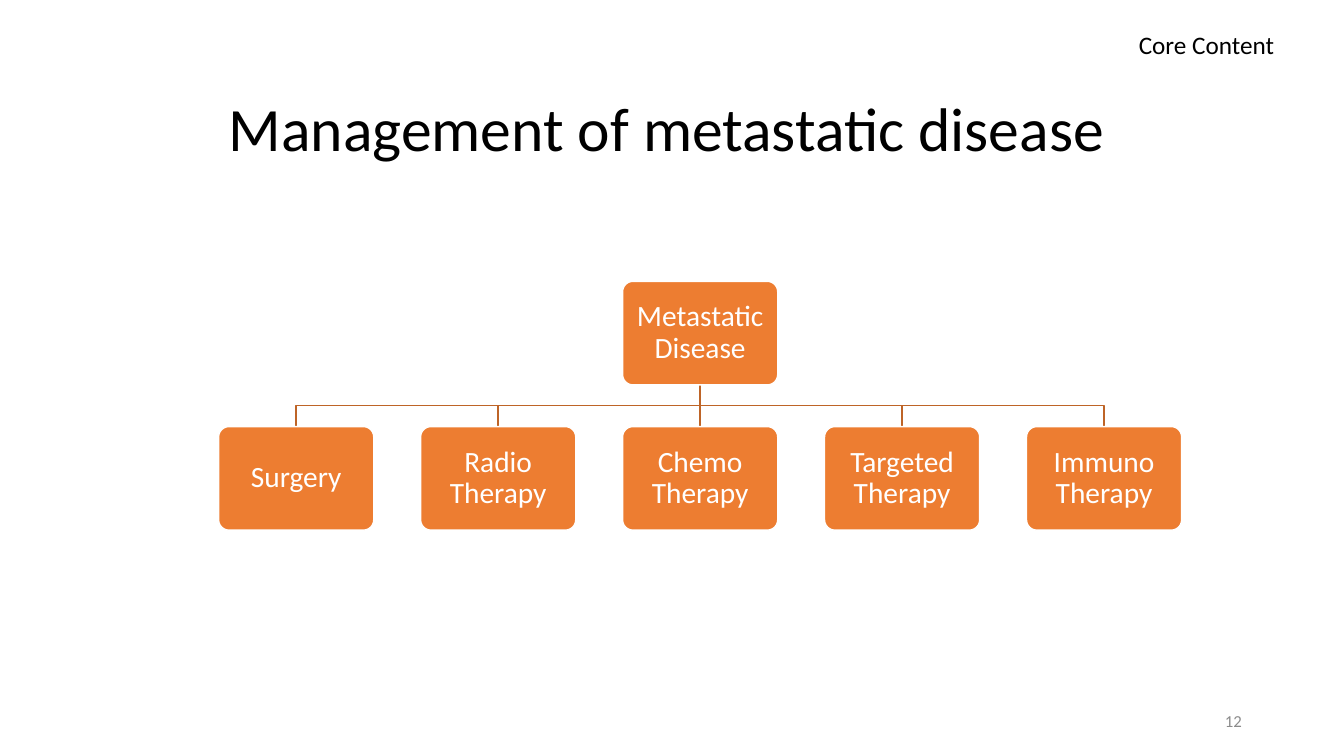
from pptx import Presentation
from pptx.dml.color import RGBColor
from pptx.enum.shapes import MSO_SHAPE as Shape
from pptx.enum.text import MSO_ANCHOR as Anchor, MSO_AUTO_SIZE as Fit, PP_ALIGN as Align
from pptx.util import Cm, Pt

# Content
TITLE = "Management of metastatic disease"
LABEL = "Core Content"
NUMBER = "12"
ROOT = "Metastatic Disease"
LEAVES = ["Surgery", "Radio Therapy", "Chemo Therapy", "Targeted Therapy", "Immuno Therapy"]

# Style and chart measures in cm
FONT = "Calibri"
COLORS = {"box": "ED7D31", "link": "BE6427", "white": "FFFFFF", "black": "000000", "grey": "8C8C8C"}
LEFT, STEP = 5.51, 5.09
WIDTH, HEIGHT = 3.91, 2.61
ROOT_TOP, LEAF_TOP = 7.09, 10.75


def color(name):
    return RGBColor.from_string(COLORS[name])


def write(shape, text, size, tint, align, anchor, space=None):
    frame = shape.text_frame
    frame.auto_size = Fit.NONE
    frame.word_wrap = True
    frame.vertical_anchor = anchor
    frame.text = text
    para = frame.paragraphs[0]
    para.alignment = align
    para.line_spacing = space
    para.font.name = FONT
    para.font.size = Pt(size)
    para.font.color.rgb = color(tint)
    return frame


def add_box(slide, text, left, top):
    box = slide.shapes.add_shape(Shape.ROUNDED_RECTANGLE, Cm(left), Cm(top), Cm(WIDTH), Cm(HEIGHT))
    box.adjustments[0] = 0.1
    box.shadow.inherit = False
    box.fill.solid()
    box.fill.fore_color.rgb = color("box")
    box.line.color.rgb = color("white")
    box.line.width = Pt(1)
    frame = write(box, text, 21, "white", Align.CENTER, Anchor.MIDDLE, 0.9)
    frame.margin_left = frame.margin_right = Cm(0.23)
    frame.margin_top = frame.margin_bottom = Cm(0.23)


def add_link(slide, start, end):
    (x1, y1), (x2, y2) = start, end
    mid = (y1 + y2) / 2
    bends = [(x1, mid), (x2, mid)] if x1 != x2 else []
    points = [(Cm(x), Cm(y)) for x, y in [start, *bends, end]]
    form = slide.shapes.build_freeform(*points[0])
    form.add_line_segments(points[1:], close=False)
    link = form.convert_to_shape()
    link.shadow.inherit = False
    link.fill.background()
    link.line.color.rgb = color("link")
    link.line.width = Pt(1)


def add_note(slide, text, place, size, tint, align, anchor):
    note = slide.shapes.add_textbox(*map(Cm, place))
    write(note, text, size, tint, align, anchor)


def main():
    prs = Presentation()
    prs.slide_width, prs.slide_height = Cm(33.87), Cm(19.05)
    slide = prs.slides.add_slide(prs.slide_layouts[5])

    # Title
    title = slide.shapes.title
    title.left, title.top, title.width, title.height = map(Cm, (5.51, 2.11, 22.86, 2.39))
    write(title, TITLE, 44, "black", Align.LEFT, Anchor.MIDDLE, 0.9)

    # Tree: root centred over the row of leaves
    lefts = [LEFT + STEP * i for i in range(len(LEAVES))]
    mid = lefts[len(LEAVES) // 2]
    for left in lefts:
        add_link(slide, (mid + WIDTH / 2, ROOT_TOP + HEIGHT), (left + WIDTH / 2, LEAF_TOP))
    add_box(slide, ROOT, mid, ROOT_TOP)
    for text, left in zip(LEAVES, lefts):
        add_box(slide, text, left, LEAF_TOP)

    # Corner label and page number
    add_note(slide, NUMBER, (23.93, 17.65, 7.62, 1.02), 12, "grey", Align.RIGHT, Anchor.MIDDLE)
    add_note(slide, LABEL, (28.45, 0.61, 4.75, 1.02), 18, "black", Align.LEFT, Anchor.TOP)

    prs.save("out.pptx")


if __name__ == "__main__":
    main()
